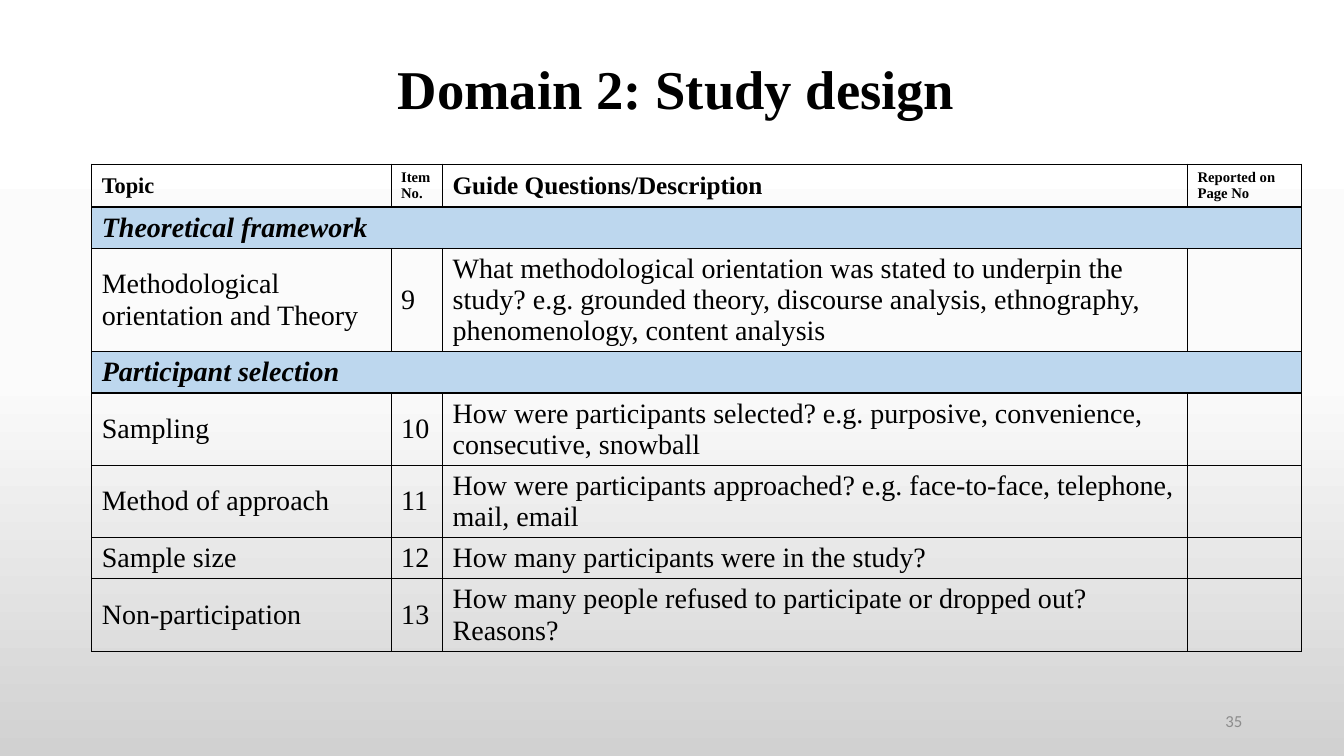
from dataclasses import dataclass

from pptx import Presentation, util as u
from pptx.dml.color import RGBColor
from pptx.enum import text
from pptx.oxml import parse_xml
from pptx.oxml.ns import nsdecls


@dataclass(frozen=True)
class Theme:
    serif: str = "Times New Roman"
    sans: str = "Calibri"
    ink: str = "000000"
    muted: str = "8C8C8C"
    band: str = "BDD7EE"
    backdrop: tuple = ((0, "FFFFFF"), (50, "FBFBFB"), (100, "D1D1D1"))
    title: float = 39
    body: float = 20
    headings: tuple = (16, 10.5, 18, 10.5)
    footer: float = 12
    border: float = 1


HEADINGS = ("Topic", "Item No.", "Guide Questions/Description", "Reported on Page No")
SECTIONS = {
    "Theoretical framework": [
        ("Methodological orientation and Theory",
         "What methodological orientation was stated to underpin the study? e.g. grounded theory, "
         "discourse analysis, ethnography, phenomenology, content analysis"),
    ],
    "Participant selection": [
        ("Sampling",
         "How were participants selected? e.g. purposive, convenience, consecutive, snowball"),
        ("Method of approach",
         "How were participants approached? e.g. face-to-face, telephone, mail, email"),
        ("Sample size", "How many participants were in the study?"),
        ("Non-participation", "How many people refused to participate or dropped out? Reasons?"),
    ],
}
FIRST_ITEM = 9
COLUMNS = (2.97, 0.51, 7.39, 1.13)
ROW_HEIGHT = 0.41


class SlideBuilder:
    def __init__(self, page, theme):
        self.page = page
        self.theme = theme

    def backdrop(self):
        stops = "".join(
            f'<a:gs pos="{place * 1000}"><a:srgbClr val="{color}"/></a:gs>'
            for place, color in self.theme.backdrop)
        self.page.element.cSld.insert(0, parse_xml(
            f'<p:bg {nsdecls("p", "a")}><p:bgPr><a:gradFill rotWithShape="1">'
            f'<a:gsLst>{stops}</a:gsLst><a:lin ang="5400000" scaled="0"/></a:gradFill>'
            '<a:effectLst/></p:bgPr></p:bg>'))

    def set_text(self, frame, words, size, font=None, color=None, bold=False, italic=False,
                 align=None):
        frame.text = words
        para = frame.paragraphs[0]
        para.alignment = align
        for span in para.runs:
            span.font.name = font or self.theme.serif
            span.font.size = u.Pt(size)
            span.font.bold = bold
            span.font.italic = italic
            span.font.color.rgb = RGBColor.from_string(color or self.theme.ink)
        return para

    def place(self, box, left, top, width, height):
        box.left, box.top = u.Inches(left), u.Inches(top)
        box.width, box.height = u.Inches(width), u.Inches(height)

    def title(self, words, *area):
        box = self.page.shapes.title
        self.place(box, *area)
        box.text_frame.vertical_anchor = text.MSO_ANCHOR.MIDDLE
        para = self.set_text(box.text_frame, words, self.theme.title, bold=True,
                             align=text.PP_ALIGN.CENTER)
        para.line_spacing = 0.9

    def page_number(self, words, *area):
        box = self.page.shapes.add_textbox(*map(u.Inches, area))
        box.text_frame.word_wrap = True
        box.text_frame.vertical_anchor = text.MSO_ANCHOR.MIDDLE
        self.set_text(box.text_frame, words, self.theme.footer, self.theme.sans,
                      self.theme.muted, align=text.PP_ALIGN.RIGHT)

    def table(self, left, top, row_count):
        frame = self.page.shapes.add_table(
            row_count, len(COLUMNS), u.Inches(left), u.Inches(top),
            u.Inches(sum(COLUMNS)), u.Inches(ROW_HEIGHT * row_count))
        grid = frame.table
        grid.first_row = grid.horz_banding = False
        for column, width in zip(grid.columns, COLUMNS):
            column.width = u.Inches(width)
        for cell in grid.iter_cells():
            cell.vertical_anchor = text.MSO_ANCHOR.MIDDLE
            cell.fill.background()
            self.outline(cell)
        return grid

    def outline(self, cell):
        properties = cell._tc.get_or_add_tcPr()
        for index, side in enumerate(("lnL", "lnR", "lnT", "lnB")):
            properties.insert(index, parse_xml(
                f'<a:{side} {nsdecls("a")} w="{u.Pt(self.theme.border)}"><a:solidFill>'
                f'<a:srgbClr val="{self.theme.ink}"/></a:solidFill></a:{side}>'))

    def heading_row(self, grid):
        for column, (words, size) in enumerate(zip(HEADINGS, self.theme.headings)):
            self.set_text(grid.cell(0, column).text_frame, words, size, bold=True)

    def section_row(self, grid, row, words):
        cell = grid.cell(row, 0)
        cell.merge(grid.cell(row, len(COLUMNS) - 1))
        cell.fill.solid()
        cell.fill.fore_color.rgb = RGBColor.from_string(self.theme.band)
        self.set_text(cell.text_frame, words, self.theme.body, bold=True, italic=True)

    def item_row(self, grid, row, values):
        for column, words in enumerate(values):
            self.set_text(grid.cell(row, column).text_frame, words, self.theme.body)

    def checklist(self, left, top):
        grid = self.table(left, top, 1 + sum(1 + len(items) for items in SECTIONS.values()))
        self.heading_row(grid)
        row, number = 1, FIRST_ITEM
        for section, items in SECTIONS.items():
            self.section_row(grid, row, section)
            row += 1
            for topic, question in items:
                self.item_row(grid, row, (topic, str(number), question))
                row += 1
                number += 1


def main():
    deck = Presentation()
    deck.slide_width, deck.slide_height = u.Inches(13.33), u.Inches(7.5)
    page = deck.slides.add_slide(deck.slide_layouts.get_by_name("Title Only"))
    builder = SlideBuilder(page, Theme())
    builder.backdrop()
    builder.title("Domain 2: Study design", 0.49, 0.19, 12.43, 1.45)
    builder.checklist(0.91, 1.63)
    builder.page_number("35", 9.42, 6.95, 3, 0.4)
    deck.save("out.pptx")


if __name__ == "__main__":
    main()
